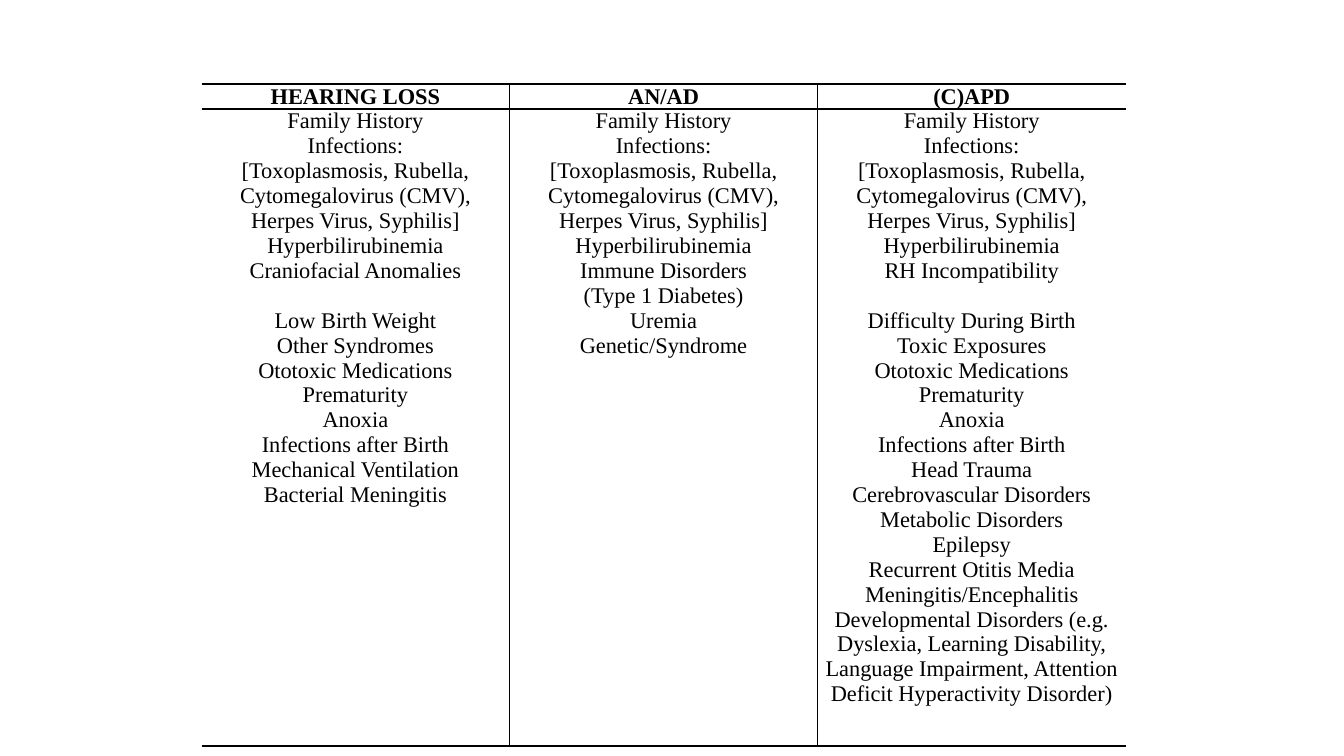
from dataclasses import dataclass

import pptx
import pptx.dml.color
import pptx.enum.text
import pptx.oxml.ns
import pptx.table
import pptx.util
from lxml import etree

EMU_PER_PX = 9525
SLIDE_WIDTH, SLIDE_HEIGHT = 1280, 720
TABLE_LEFT, TABLE_TOP = 192, 80
COLUMN_WIDTHS = (293, 294, 293)
LINE_HEIGHT = 23
CELL_MARGIN = 6
FONT_NAME = "Times New Roman"
FONT_SIZE = pptx.util.Pt(16)
BLACK = pptx.dml.color.RGBColor(0x00, 0x00, 0x00)
THIN, THICK = 1.0, 1.5
INFECTIONS = (
    "Infections:\n[Toxoplasmosis, Rubella, Cytomegalovirus (CMV), "
    "Herpes Virus, Syphilis]"
)


@dataclass(frozen=True)
class RiskRow:
    hearing_loss: str
    neuropathy: str
    processing: str
    height: int = LINE_HEIGHT

    def texts(self) -> tuple[str, str, str]:
        return self.hearing_loss, self.neuropathy, self.processing


ROWS = (
    RiskRow("HEARING LOSS", "AN/AD", "(C)APD"),
    RiskRow("Family History", "Family History", "Family History"),
    RiskRow(INFECTIONS, INFECTIONS, INFECTIONS, 91),
    RiskRow("Hyperbilirubinemia", "Hyperbilirubinemia", "Hyperbilirubinemia"),
    RiskRow("Craniofacial Anomalies", "Immune Disorders\n(Type 1 Diabetes)",
            "RH Incompatibility", 46),
    RiskRow("Low Birth Weight", "Uremia", "Difficulty During Birth"),
    RiskRow("Other Syndromes", "Genetic/Syndrome", "Toxic Exposures"),
    RiskRow("Ototoxic Medications", "", "Ototoxic Medications"),
    RiskRow("Prematurity", "", "Prematurity"),
    RiskRow("Anoxia", "", "Anoxia"),
    RiskRow("Infections after Birth", "", "Infections after Birth"),
    RiskRow("Mechanical Ventilation", "", "Head Trauma"),
    RiskRow("Bacterial Meningitis", "", "Cerebrovascular Disorders"),
    RiskRow("", "", "Metabolic Disorders\nEpilepsy\nRecurrent Otitis Media\n"
            "Meningitis/Encephalitis\nDevelopmental Disorders (e.g. Dyslexia, "
            "Learning Disability, Language Impairment, Attention Deficit "
            "Hyperactivity Disorder)", 227),
)


def px(length: int) -> pptx.util.Emu:
    return pptx.util.Emu(length * EMU_PER_PX)


def write_cell(cell: pptx.table._Cell, text: str, bold: bool) -> None:
    cell.margin_left = cell.margin_right = px(CELL_MARGIN)
    cell.margin_top = cell.margin_bottom = 0
    cell.text_frame.text = text
    for paragraph in cell.text_frame.paragraphs:
        paragraph.alignment = pptx.enum.text.PP_ALIGN.CENTER
        for run in paragraph.runs:
            run.font.name = FONT_NAME
            run.font.size = FONT_SIZE
            run.font.bold = bold
            run.font.color.rgb = BLACK
        if not paragraph.runs:
            ending = etree.SubElement(
                paragraph._p, pptx.oxml.ns.qn("a:endParaRPr"))
            ending.set("sz", str(FONT_SIZE.centipoints))
            typeface = etree.SubElement(ending, pptx.oxml.ns.qn("a:latin"))
            typeface.set("typeface", FONT_NAME)


def draw_borders(cell: pptx.table._Cell, row: int, column: int) -> None:
    horizontal = {0: THIN, 1: THICK, len(ROWS): THICK}
    widths = {
        "a:lnL": THIN if column > 0 else 0,
        "a:lnR": THIN if column < len(COLUMN_WIDTHS) - 1 else 0,
        "a:lnT": horizontal.get(row, 0),
        "a:lnB": horizontal.get(row + 1, 0),
    }
    properties = cell._tc.get_or_add_tcPr()
    for position, (tag, width) in enumerate(widths.items()):
        line = etree.Element(pptx.oxml.ns.qn(tag))
        line.set("w", str(pptx.util.Pt(width)))
        if width:
            fill = etree.SubElement(line, pptx.oxml.ns.qn("a:solidFill"))
            color = etree.SubElement(fill, pptx.oxml.ns.qn("a:srgbClr"))
            color.set("val", str(BLACK))
        else:
            etree.SubElement(line, pptx.oxml.ns.qn("a:noFill"))
        properties.insert(position, line)


def main() -> None:
    presentation = pptx.Presentation()
    presentation.slide_width = px(SLIDE_WIDTH)
    presentation.slide_height = px(SLIDE_HEIGHT)
    slide = presentation.slides.add_slide(presentation.slide_layouts[6])
    table = slide.shapes.add_table(
        len(ROWS), len(COLUMN_WIDTHS), px(TABLE_LEFT), px(TABLE_TOP),
        px(sum(COLUMN_WIDTHS)), px(sum(row.height for row in ROWS)),
    ).table
    table.first_row = False
    table.horz_banding = False
    for column, width in zip(table.columns, COLUMN_WIDTHS):
        column.width = px(width)
    for row_index, row in enumerate(ROWS):
        table.rows[row_index].height = px(row.height)
        for column_index, text in enumerate(row.texts()):
            cell = table.cell(row_index, column_index)
            write_cell(cell, text, bold=row_index == 0)
            cell.fill.background()
            draw_borders(cell, row_index, column_index)
    presentation.save("out.pptx")


if __name__ == "__main__":
    main()
